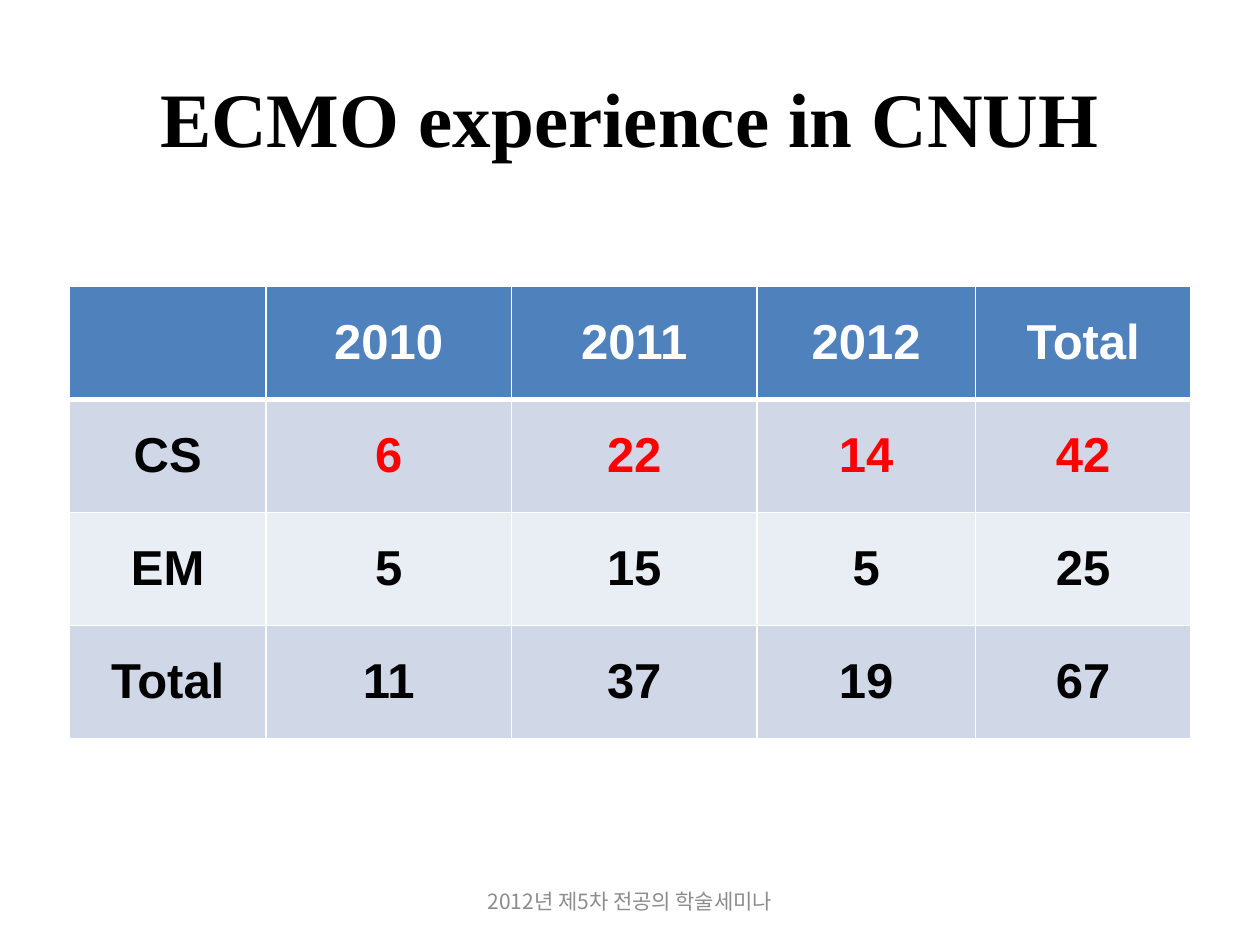
from lxml import etree
from pptx import Presentation
from pptx import util as u
from pptx.dml import color
from pptx.enum import text
from pptx.oxml import ns

COLORS = {
    "ink": "000000",
    "white": "FFFFFF",
    "header": "4F81BD",
    "band": "D0D8E8",
    "light_band": "E9EDF4",
    "highlight": "FF0000",
    "footer": "8C8C8C",
}
CASES = [
    ["", "2010", "2011", "2012", "Total"],
    ["CS", "6", "22", "14", "42"],
    ["EM", "5", "15", "5", "25"],
    ["Total", "11", "37", "19", "67"],
]
COLUMN_WIDTHS = [3.96, 4.95, 4.95, 4.4, 4.35]
ROW_FILLS = ["header", "band", "light_band", "band"]


def rgb(name):
    return color.RGBColor.from_string(COLORS[name])


def write(frame, words, size, font_name, ink, bold=False):
    frame.text = words
    line = frame.paragraphs[0]
    line.alignment = text.PP_ALIGN.CENTER
    for run in line.runs:
        run.font.size = u.Pt(size)
        run.font.name = font_name
        run.font.bold = bold
        run.font.color.rgb = rgb(ink)
        east_asian = etree.SubElement(run.font._element, ns.qn("a:ea"))
        east_asian.set("typeface", font_name)


def add_line_of_text(slide, box, *style):
    frame = slide.shapes.add_textbox(*map(u.Cm, box)).text_frame
    frame.word_wrap = True
    frame.vertical_anchor = text.MSO_ANCHOR.MIDDLE
    write(frame, *style)


def add_title(slide, box):
    add_line_of_text(slide, box, "ECMO experience in CNUH", 44, "Times New Roman", "ink", True)


def add_footer(slide, box):
    add_line_of_text(slide, box, "2012년 제5차 전공의 학술세미나", 12, "Noto Sans CJK KR", "footer")


def set_borders(cell, top, bottom):
    properties = cell._tc.get_or_add_tcPr()
    for side, width in {"lnL": 1, "lnR": 1, "lnT": top, "lnB": bottom}.items():
        border = etree.SubElement(properties, ns.qn(f"a:{side}"), w=str(u.Pt(width)))
        fill = etree.SubElement(border, ns.qn("a:solidFill"))
        etree.SubElement(fill, ns.qn("a:srgbClr"), val=COLORS["white"])


def text_color(row, column):
    if row == 0:
        return "white"
    return "highlight" if row == 1 and column > 0 else "ink"


def add_case_table(slide, box):
    table = slide.shapes.add_table(len(CASES), len(CASES[0]), *map(u.Cm, box)).table
    for column, width in zip(table.columns, COLUMN_WIDTHS):
        column.width = u.Cm(width)
    for r, values in enumerate(CASES):
        table.rows[r].height = u.Cm(box[3] / len(CASES))
        for c, value in enumerate(values):
            cell = table.cell(r, c)
            set_borders(cell, 3 if r == 1 else 1, 3 if r == 0 else 1)
            cell.fill.solid()
            cell.fill.fore_color.rgb = rgb(ROW_FILLS[r])
            cell.vertical_anchor = text.MSO_ANCHOR.MIDDLE
            write(cell.text_frame, value, 28, "Arial", text_color(r, c), True)


def main():
    deck = Presentation()
    deck.slide_width, deck.slide_height = u.Cm(25.4), u.Cm(19.05)
    slide = deck.slides.add_slide(deck.slide_layouts[6])
    add_title(slide, (1.27, 0.76, 22.86, 3.18))
    add_case_table(slide, (1.4, 5.77, sum(COLUMN_WIDTHS), 9.12))
    add_footer(slide, (8.68, 17.66, 8.04, 1.01))
    deck.save("out.pptx")


if __name__ == "__main__":
    main()
